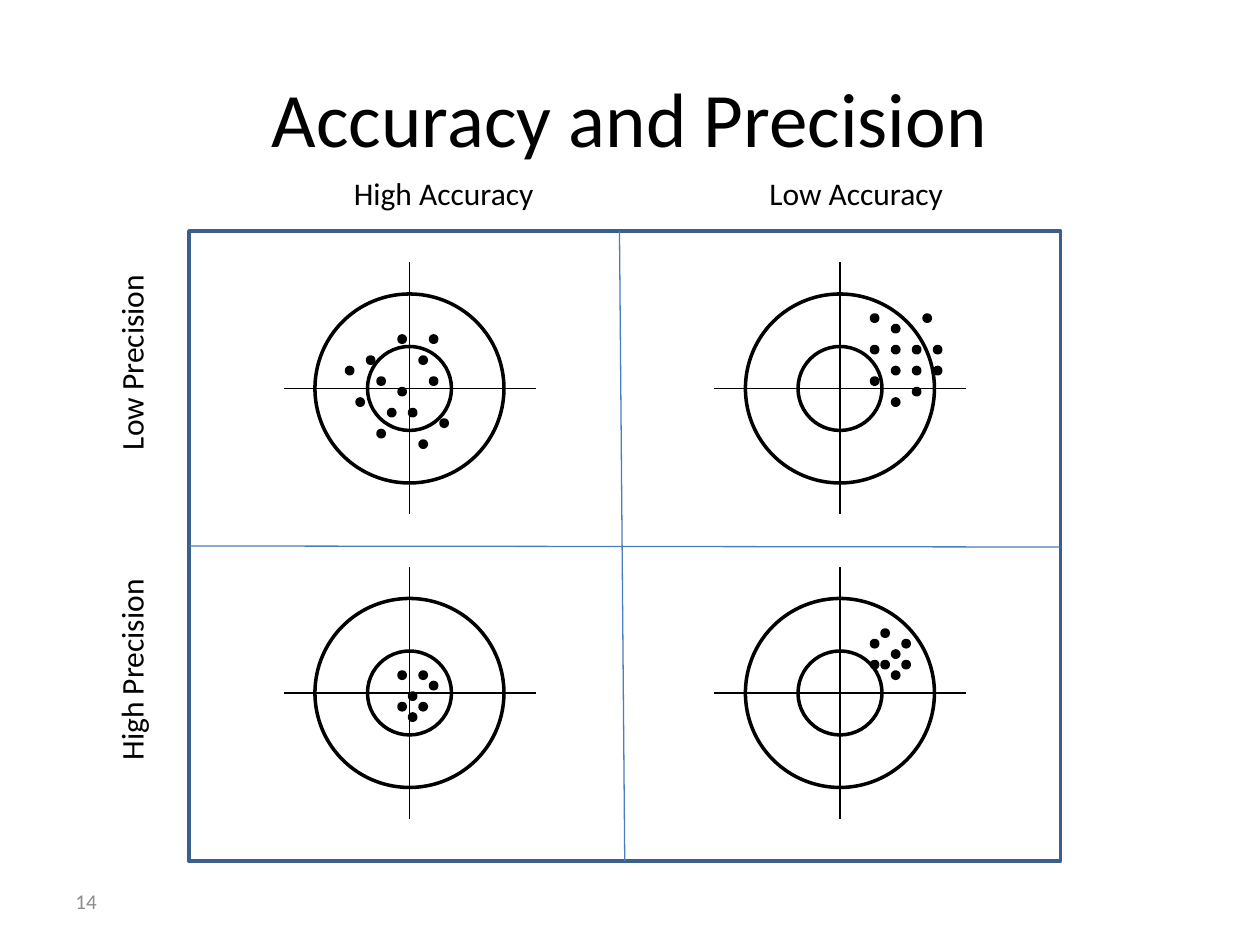
from lxml.etree import SubElement
from pptx import Presentation
from pptx.dml.color import RGBColor
from pptx.enum.shapes import MSO_CONNECTOR as Connector, MSO_SHAPE as Preset
from pptx.enum.text import MSO_ANCHOR as Anchor, PP_ALIGN as Align
from pptx.oxml.ns import qn
from pptx.util import Pt

PX = 7620  # EMU per px, 120 px to the inch
GRID = 10  # spacing of the hit positions
COLORS = {"ink": "000000", "frame": "3A5F8C", "divider": "4B7EBC", "number": "8C8C8C"}

# Target centre, then hits as grid steps from that centre
TARGETS = [
    ((390, 370), [(-2, 2), (-3, 4), (0, 2), (-1, 0), (-3, -1), (-5, 1), (-6, -2),
                  (-4, -3), (-1, -5), (1, -3), (2, -1), (3, 3), (1, 5), (2, -5)]),
    ((800, 370), [(3, -4), (5, -2), (7, 0), (5, 1), (3, -1), (5, -4), (7, -2),
                  (7, -4), (9, -2), (8, -7), (9, -4), (5, -6), (3, -7)]),
    ((390, 660), [(2, -1), (1, 1), (1, -2), (0, 0), (-1, -2), (0, 2), (-1, 1)]),
    ((800, 660), [(4, -6), (3, -5), (5, -4), (4, -3), (6, -3), (6, -5), (5, -2), (3, -3)]),
]
LABELS = [
    ("High Accuracy", 280, 160, 0),
    ("Low Accuracy", 670, 160, 0),
    ("High Precision", 5, 636, 270),
    ("Low Precision", 5, 346, 270),
]


def emu(*lengths):
    return [length * PX for length in lengths]


def color(name):
    return RGBColor.from_string(COLORS[name])


class SlideBuilder:
    font = "Calibri"

    def __init__(self, slide):
        self.slide = slide

    def add_text(self, shape, text, size, align, color_name="ink"):
        frame = shape.text_frame
        frame.word_wrap = True
        paragraph = frame.paragraphs[0]
        paragraph.alignment = align
        run = paragraph.add_run()
        run.text = text
        run.font.name = self.font
        run.font.size = Pt(size)
        run.font.color.rgb = color(color_name)

    def title(self, text, *box):
        shape = self.slide.shapes.title
        shape.left, shape.top, shape.width, shape.height = emu(*box)
        shape.text_frame.vertical_anchor = Anchor.MIDDLE
        self.add_text(shape, text, 44, Align.CENTER)

    def label(self, text, box, size, align, color_name="ink", rotation=0, anchor=Anchor.TOP):
        shape = self.slide.shapes.add_textbox(*emu(*box))
        shape.rotation = rotation
        shape.text_frame.vertical_anchor = anchor
        self.add_text(shape, text, size, align, color_name)

    def outline(self, shapes, preset, box, color_name="ink", filled=False):
        shape = shapes.add_shape(preset, *emu(*box))
        shape.shadow.inherit = False
        if filled:
            shape.fill.solid()
            shape.fill.fore_color.rgb = color(color_name)
        else:
            shape.fill.background()
        shape.line.color.rgb = color(color_name)
        shape.line.width = Pt(2)

    def line(self, shapes, ends, color_name="ink"):
        connector = shapes.add_connector(Connector.STRAIGHT, *emu(*ends))
        connector.line.color.rgb = color(color_name)
        connector.line.width = Pt(0.75)
        SubElement(connector._element.spPr, qn("a:effectLst"))

    def target(self, x, y):
        """Two rings and a cross hair, grouped, around (x, y)."""
        shapes = self.slide.shapes.add_group_shape().shapes
        for radius in (90, 40):
            box = (x - radius, y - radius, 2 * radius, 2 * radius)
            self.outline(shapes, Preset.OVAL, box)
        self.line(shapes, (x, y - 120, x, y + 120))
        self.line(shapes, (x + 120, y, x - 120, y))

    def hit(self, x, y):
        self.outline(self.slide.shapes, Preset.OVAL, (x, y, 6, 6), filled=True)


def main():
    presentation = Presentation()
    presentation.slide_width, presentation.slide_height = emu(1200, 900)
    slide = presentation.slides.add_slide(presentation.slide_layouts[5])
    builder = SlideBuilder(slide)

    builder.title("Accuracy and Precision", 60, 36, 1080, 150)
    builder.label("14", (60, 834, 280, 48), 12, Align.LEFT, "number", anchor=Anchor.MIDDLE)

    builder.outline(slide.shapes, Preset.RECTANGLE, (180, 220, 830, 600), "frame")
    for ends in ((180, 520, 1010, 521), (590, 220, 595, 820)):
        builder.line(slide.shapes, ends, "divider")

    for center, _ in TARGETS:
        builder.target(*center)
    for text, left, top, rotation in LABELS:
        builder.label(text, (left, top, 240, 48), 18, Align.RIGHT, rotation=rotation)
    for (x, y), hits in TARGETS:
        for column, row in hits:
            builder.hit(x + column * GRID, y + row * GRID)

    presentation.save("out.pptx")


if __name__ == "__main__":
    main()
